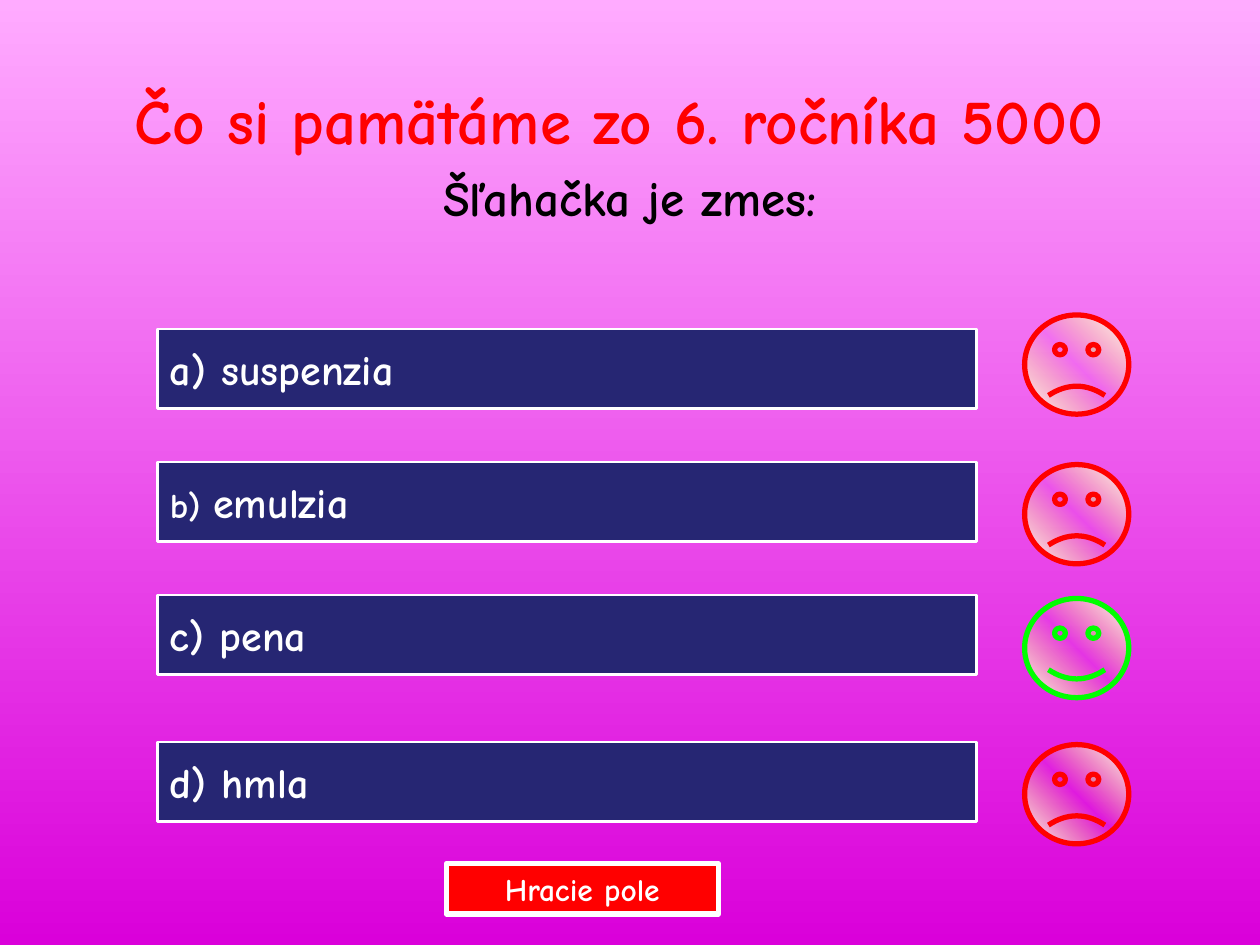
from copy import deepcopy

from lxml.etree import SubElement
from pptx import Presentation
from pptx.dml.color import RGBColor
from pptx.enum.shapes import MSO_SHAPE
from pptx.enum.text import MSO_ANCHOR, PP_ALIGN
from pptx.oxml.ns import qn
from pptx.util import Pt

FONT = "Comic Neue"
COLORS = {
    "sky": "FFABFF", "magenta": "DA00DA", "navy": "262673", "red": "FF0000",
    "green": "00FF00", "white": "FFFFFF", "black": "000000", "yellow": "FFFF66",
}

# Content: heading lines, then answers as (text runs, top, face top, correct)
HEADING = [
    ("Čo si pamätáme zo 6. ročníka 5000 ", 36, "red"),
    ("Šľahačka je zmes:", 28, "black"),
]
ANSWERS = [
    ([("a) suspenzia", 24)], 188, 180, False),
    ([("b) ", 20), ("emulzia", 24)], 264, 265.5, False),
    ([("c) pena", 24)], 340, 342, True),
    ([("d) hmla", 24)], 424, 425.5, False),
]
BACK_LABEL = [("Hracie pole", 18)]

ANSWER_LEFT, ANSWER_WIDTH, ANSWER_HEIGHT = 90, 468, 45.5
FACE_LEFT, FACE_WIDTH, FACE_HEIGHT = 585.5, 59.5, 56.7
SMILE = 0.0465


def color(name):
    return RGBColor.from_string(COLORS[name])


def style_run(run, size, color_name):
    run.font.name = FONT
    run.font.size = Pt(size)
    run.font.bold = True
    run.font.color.rgb = color(color_name)


def add_outlined(slide, preset, box, line_name, line_width):
    shape = slide.shapes.add_shape(preset, *map(Pt, box))
    shape.shadow.inherit = False
    shape.line.color.rgb = color(line_name)
    shape.line.width = Pt(line_width)
    return shape


def add_button(slide, box, runs, fill_name, line_width, align):
    button = add_outlined(slide, MSO_SHAPE.ACTION_BUTTON_CUSTOM, box, "white", line_width)
    button.fill.solid()
    button.fill.fore_color.rgb = color(fill_name)
    frame = button.text_frame
    frame.word_wrap = False
    frame.vertical_anchor = MSO_ANCHOR.MIDDLE
    paragraph = frame.paragraphs[0]
    paragraph.alignment = align
    for text, size in runs:
        run = paragraph.add_run()
        run.text = text
        style_run(run, size, "white")


def set_gradient(fill, angle, first, last):
    fill.gradient()
    fill.gradient_angle = angle
    for stop, name, position in zip(fill.gradient_stops, (first, last), (0, 1)):
        stop.color.rgb = color(name)
        stop.position = position


def add_face(slide, top, correct):
    box = (FACE_LEFT, top, FACE_WIDTH, FACE_HEIGHT)
    face = add_outlined(slide, MSO_SHAPE.SMILEY_FACE, box, "green" if correct else "red", 3)
    face.adjustments[0] = SMILE if correct else -SMILE
    set_gradient(face.fill, 45, "white", "white")
    # Clear yellow stop in the middle
    stops = face.element.spPr.find(".//" + qn("a:gsLst"))
    middle = deepcopy(stops[0])
    middle.set("pos", "50000")
    middle[0].set("val", COLORS["yellow"])
    SubElement(middle[0], qn("a:alpha")).set("val", "0")
    stops.insert(1, middle)


def add_heading(slide):
    heading = slide.shapes.add_textbox(Pt(0), Pt(43.2), Pt(720), Pt(57))
    frame = heading.text_frame
    frame.word_wrap = True
    frame.text = "\n".join(text for text, _, _ in HEADING)
    for paragraph, (_, size, color_name) in zip(frame.paragraphs, HEADING):
        paragraph.alignment = PP_ALIGN.CENTER
        paragraph.space_before = Pt(size * 0.2)
        # Hanging indent
        properties = paragraph._p.get_or_add_pPr()
        properties.set("marL", str(Pt(27)))
        properties.set("indent", str(Pt(-27)))
        style_run(paragraph.runs[0], size, color_name)


def main():
    prs = Presentation()
    prs.slide_width, prs.slide_height = Pt(720), Pt(540)
    slide = prs.slides.add_slide(prs.slide_layouts[6])
    set_gradient(slide.background.fill, 270, "sky", "magenta")

    add_heading(slide)

    # Answers with their faces
    for runs, top, face_top, correct in ANSWERS:
        box = (ANSWER_LEFT, top, ANSWER_WIDTH, ANSWER_HEIGHT)
        add_button(slide, box, runs, "navy", 1.5, PP_ALIGN.LEFT)
        add_face(slide, face_top, correct)

    # Button back to the board
    add_button(slide, (255, 493.5, 155.5, 28.8), BACK_LABEL, "red", 3, PP_ALIGN.CENTER)

    prs.save("out.pptx")


if __name__ == "__main__":
    main()
